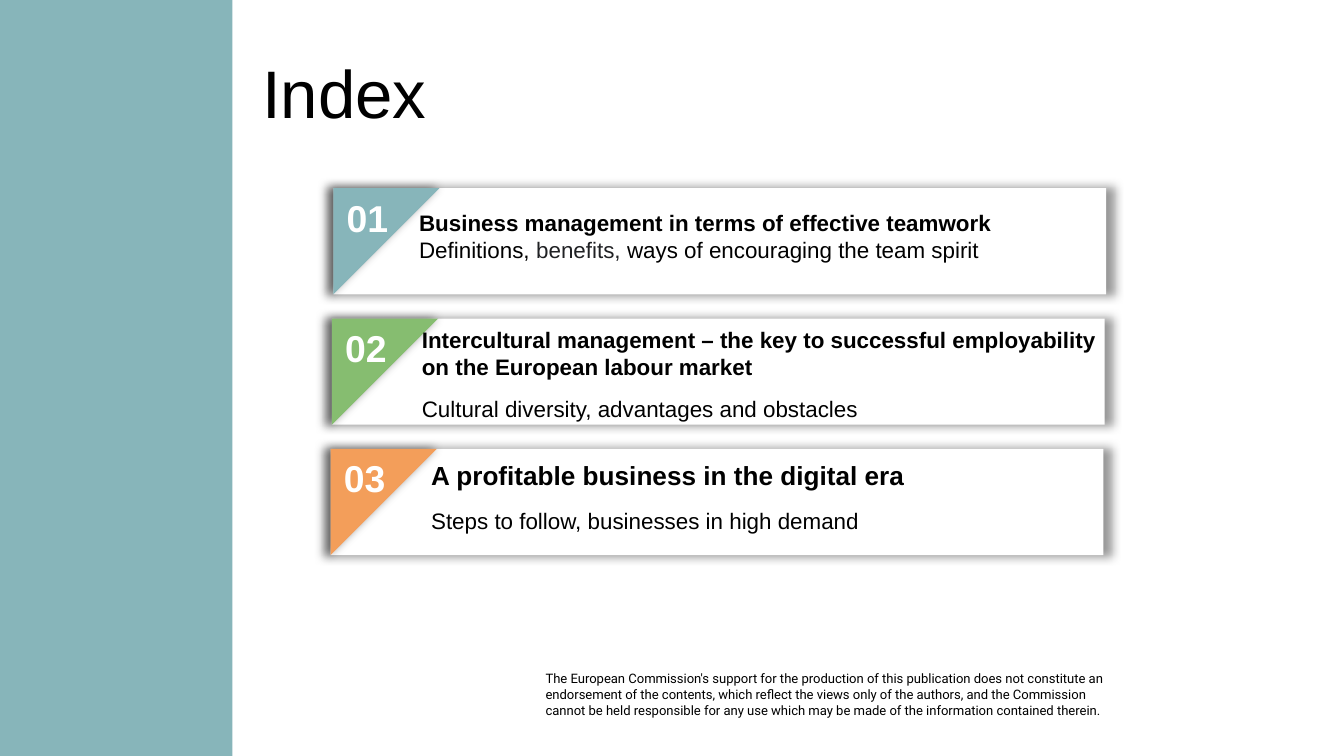
from dataclasses import dataclass

import lxml.etree
import pptx
import pptx.dml.color
import pptx.enum.shapes
import pptx.enum.text
import pptx.oxml.ns
import pptx.util

Inches = pptx.util.Inches
Pt = pptx.util.Pt
MSO_SHAPE = pptx.enum.shapes.MSO_SHAPE

COLORS = {
    "teal": "87B5BA",
    "green": "86BD70",
    "orange": "F39E5A",
    "white": "FFFFFF",
    "black": "000000",
    "charcoal": "202124",
}

SLIDE_WIDTH = 10
SLIDE_HEIGHT = SLIDE_WIDTH * 9 / 16
CARD_WIDTH = 5.75
CARD_HEIGHT = 0.79
FIRST_CARD_TOP = 1.4
CARD_PITCH = 0.97


@dataclass
class Run:
    text: str
    color: str = "black"


@dataclass
class Line:
    runs: list[Run]
    size: float = 12
    bold: bool = False
    color: str = "black"
    font: str = "Arial"
    space_after: float = 0
    spacing: float = 1.0


@dataclass
class Box:
    left: float
    top: float
    width: float
    height: float


@dataclass
class Topic:
    number: str
    color: str
    left: float
    text_box: Box
    lines: list[Line]


TOPICS = [
    Topic("01", "teal", 2.48, Box(3.02, 1.51, 5.19, 0.5), [
        Line([Run("Business management in terms of effective teamwork")], bold=True),
        Line([Run("Definitions, "), Run("benefits,", "charcoal"),
              Run(" ways of encouraging the team spirit")]),
    ]),
    Topic("02", "green", 2.47, Box(3.04, 2.38, 5.35, 1.17), [
        Line([Run("Intercultural management – the key to successful employability "
                  "on the European labour market")], bold=True, space_after=8),
        Line([Run("Cultural diversity, advantages and obstacles")], space_after=8),
    ]),
    Topic("03", "orange", 2.46, Box(3.11, 3.35, 5, 0.67), [
        Line([Run("A profitable business in the digital era")],
             size=14, bold=True, space_after=8, spacing=1.07),
        Line([Run("Steps to follow, businesses in high demand")],
             space_after=8, spacing=1.07),
    ]),
]

DISCLAIMER = [
    "The European Commission's support for the production of this publication does not "
    "constitute an endorsement of the contents, which reflect the views only of the "
    "authors, and the Commission",
    "cannot be held responsible for any use which may be made of the information "
    "contained therein.",
]


def rgb(name: str) -> pptx.dml.color.RGBColor:
    return pptx.dml.color.RGBColor.from_string(COLORS[name])


def place(box: Box) -> list[int]:
    return [Inches(v) for v in (box.left, box.top, box.width, box.height)]


def write_lines(frame, lines: list[Line]) -> None:
    for index, line in enumerate(lines):
        paragraph = frame.add_paragraph() if index else frame.paragraphs[0]
        paragraph.alignment = pptx.enum.text.PP_ALIGN.LEFT
        paragraph.space_after = Pt(line.space_after)
        paragraph.line_spacing = line.spacing
        paragraph.font.name = line.font
        paragraph.font.size = Pt(line.size)
        paragraph.font.bold = line.bold
        paragraph.font.color.rgb = rgb(line.color)
        for part in line.runs:
            run = paragraph.add_run()
            run.text = part.text
            if part.color != "black":
                run.font.color.rgb = rgb(part.color)


def add_text(slide, box: Box, lines: list[Line], inset: bool = True) -> None:
    frame = slide.shapes.add_textbox(*place(box)).text_frame
    frame.word_wrap = True
    if not inset:
        frame.margin_left = frame.margin_right = 0
        frame.margin_top = frame.margin_bottom = 0
    write_lines(frame, lines)


def add_block(shapes, kind: MSO_SHAPE, box: Box, color: str):
    block = shapes.add_shape(kind, *place(box))
    block.fill.solid()
    block.fill.fore_color.rgb = rgb(color)
    block.line.fill.background()
    block.shadow.inherit = False
    return block


def add_glow(block) -> None:
    qn = pptx.oxml.ns.qn
    effects = block.element.spPr.find(qn("a:effectLst"))
    shadow = lxml.etree.SubElement(
        effects, qn("a:outerShdw"), blurRad=str(Pt(5)), dist="0", dir="0",
        sx="102000", sy="102000", algn="ctr", rotWithShape="0")
    tint = lxml.etree.SubElement(shadow, qn("a:srgbClr"), val=COLORS["black"])
    lxml.etree.SubElement(tint, qn("a:alpha"), val="40000")


def add_card(slide, topic: Topic, top: float) -> None:
    card = slide.shapes.add_group_shape()
    panel = add_block(card.shapes, MSO_SHAPE.RECTANGLE,
                      Box(topic.left, top, CARD_WIDTH, CARD_HEIGHT), "white")
    corner = add_block(card.shapes, MSO_SHAPE.RIGHT_TRIANGLE,
                       Box(topic.left, top, CARD_HEIGHT, CARD_HEIGHT), topic.color)
    corner.rotation = 90
    add_glow(panel)
    add_glow(corner)


def main() -> None:
    deck = pptx.Presentation()
    deck.slide_width = Inches(SLIDE_WIDTH)
    deck.slide_height = Inches(SLIDE_HEIGHT)
    slide = deck.slides.add_slide(deck.slide_layouts[5])

    add_block(slide.shapes, MSO_SHAPE.RECTANGLE, Box(0, 0, 1.73, SLIDE_HEIGHT), "teal")

    title = slide.shapes.title
    title.left, title.top, title.width, title.height = place(Box(1.85, 0.37, 7.2, 0.63))
    title.text_frame.auto_size = pptx.enum.text.MSO_AUTO_SIZE.NONE
    title.text_frame.vertical_anchor = pptx.enum.text.MSO_ANCHOR.MIDDLE
    write_lines(title.text_frame, [Line([Run("Index")], size=36)])

    for index, topic in enumerate(TOPICS):
        top = FIRST_CARD_TOP + index * CARD_PITCH
        add_card(slide, topic, top)
        add_text(slide, Box(topic.left, top, 0.58, 0.44),
                 [Line([Run(topic.number)], size=20, bold=True, color="white")])
        add_text(slide, topic.text_box, topic.lines)

    add_text(slide, Box(4.06, 4.99, 4.17, 0.35),
             [Line([Run(text)], size=7, font="Roboto") for text in DISCLAIMER],
             inset=False)

    deck.save("out.pptx")


if __name__ == "__main__":
    main()
